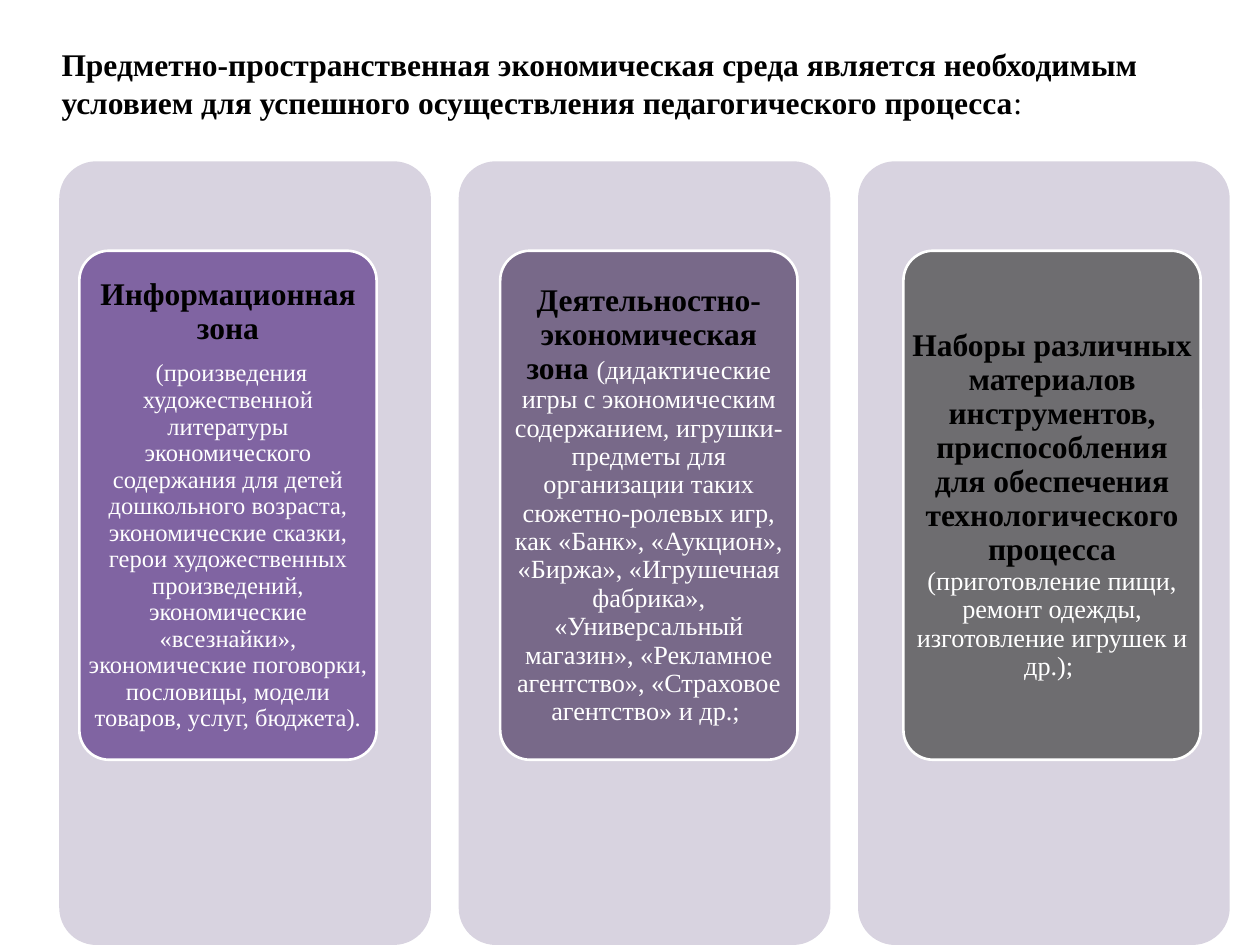
from pptx import Presentation
from pptx.dml.color import RGBColor
from pptx.enum import shapes, text
from pptx.util import Inches, Pt

BLACK = RGBColor(0x00, 0x00, 0x00)
WHITE = RGBColor(0xFF, 0xFF, 0xFF)
LILAC = RGBColor(0xD8, 0xD3, 0xE0)
PURPLE = RGBColor(0x80, 0x64, 0xA2)
MAUVE = RGBColor(0x78, 0x69, 0x89)
GREY = RGBColor(0x6E, 0x6D, 0x70)

HEADING = {"size": Pt(18), "bold": True, "color": BLACK}
DETAIL = {"size": Pt(15), "bold": False, "color": WHITE}
SMALL_DETAIL = {**DETAIL, "size": Pt(14)}
SPACER = {"size": Pt(16), "bold": True, "color": WHITE}

TITLE = [[
    ("Предметно-пространственная экономическая среда является необходимым "
     "условием для успешного осуществления педагогического процесса", HEADING),
    (":", {**HEADING, "bold": False}),
]]

# Each zone: card left edge, card colour, paragraphs of (wording, format) runs
ZONES = [
    (0.63, PURPLE, [
        [("Информационная зона", HEADING)],
        [(" ", SPACER),
         ("(произведения художественной литературы экономического содержания "
          "для детей дошкольного возраста, экономические сказки, герои "
          "художественных произведений, экономические «всезнайки», "
          "экономические поговорки, пословицы, модели товаров, услуг, "
          "бюджета).", SMALL_DETAIL)],
    ]),
    (3.97, MAUVE, [
        [("Деятельностно-экономическая зона ", HEADING),
         ("(дидактические игры с экономическим содержанием, игрушки-предметы "
          "для организации таких сюжетно-ролевых игр, как «Банк», «Аукцион», "
          "«Биржа», «Игрушечная фабрика», «Универсальный магазин», «Рекламное "
          "агентство», «Страховое агентство» и др.; ", DETAIL)],
    ]),
    (7.17, GREY, [
        [("Наборы различных материалов инструментов, приспособления для "
          "обеспечения технологического процесса ", HEADING),
         ("(приготовление пищи, ремонт одежды, изготовление игрушек и др.); ",
          DETAIL)],
    ]),
]

PANEL_LEFT, PANEL_STEP = 0.47, 3.17
PANEL_TOP, PANEL_SIZE = 1.28, (2.95, 6.22)
CARD_TOP, CARD_SIZE = 1.99, (2.36, 4.04)

CARD_FRAME = {
    "vertical_anchor": text.MSO_ANCHOR.MIDDLE,
    "margin_left": Inches(0.05), "margin_right": Inches(0.05),
    "margin_top": Inches(0.04), "margin_bottom": Inches(0.04),
}
CARD_PARAGRAPH = {
    "alignment": text.PP_ALIGN.CENTER, "line_spacing": 0.9, "space_after": Pt(6),
}


def set_all(target, values):
    for name, value in values.items():
        setattr(target, name, value)


def add_rounded(slide, box, fill, outline=None):
    rounded = slide.shapes.add_shape(
        shapes.MSO_SHAPE.ROUNDED_RECTANGLE, *map(Inches, box))
    rounded.adjustments[0] = 0.1
    rounded.shadow.inherit = False
    rounded.fill.solid()
    rounded.fill.fore_color.rgb = fill
    if outline is None:
        rounded.line.fill.background()
    else:
        rounded.line.color.rgb = outline
        rounded.line.width = Pt(1.5)


def add_wording(slide, box, paragraphs, frame_format, paragraph_format):
    frame = slide.shapes.add_textbox(*map(Inches, box)).text_frame
    set_all(frame, {"word_wrap": True, **frame_format})
    for index, runs in enumerate(paragraphs):
        paragraph = frame.add_paragraph() if index else frame.paragraphs[0]
        set_all(paragraph, paragraph_format)
        for wording, style in runs:
            run = paragraph.add_run()
            run.text = wording
            set_all(run.font, {"name": "Times New Roman", "size": style["size"],
                               "bold": style["bold"]})
            run.font.color.rgb = style["color"]


def main():
    deck = Presentation()
    deck.slide_width, deck.slide_height = Inches(10), Inches(7.5)
    slide = deck.slides.add_slide(deck.slide_layouts[6])

    for column, (card_left, card_color, paragraphs) in enumerate(ZONES):
        panel_left = PANEL_LEFT + column * PANEL_STEP
        add_rounded(slide, (panel_left, PANEL_TOP, *PANEL_SIZE), LILAC)
        card = (card_left, CARD_TOP, *CARD_SIZE)
        add_rounded(slide, card, card_color, WHITE)
        add_wording(slide, card, paragraphs, CARD_FRAME, CARD_PARAGRAPH)

    add_wording(slide, (0.39, 0.31, 9.16, 0.71), TITLE,
                {"auto_size": text.MSO_AUTO_SIZE.SHAPE_TO_FIT_TEXT}, {})
    deck.save("out.pptx")


if __name__ == "__main__":
    main()
